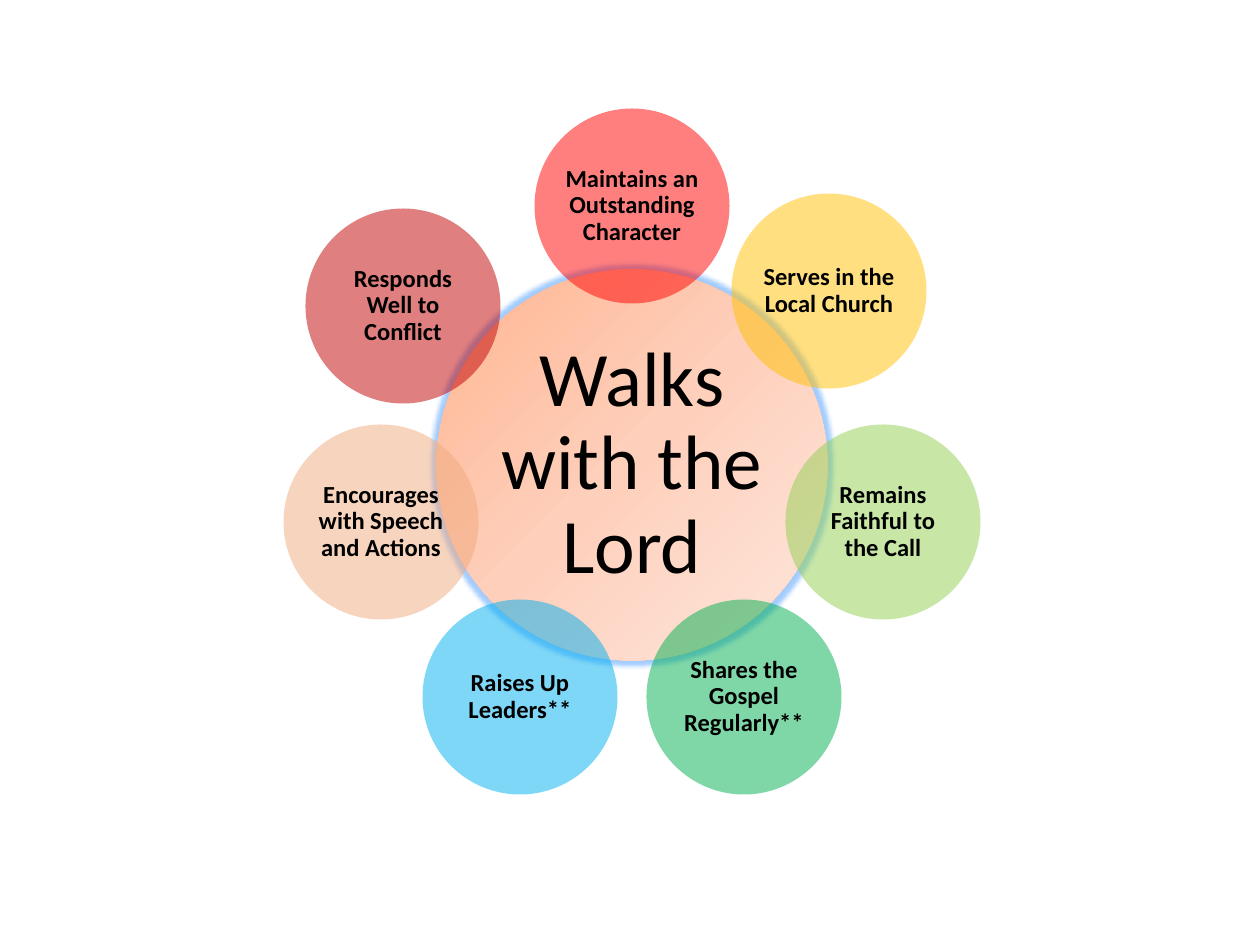
import math
from dataclasses import dataclass

from lxml import etree
from pptx import Presentation
from pptx import util as u
from pptx.dml.color import RGBColor
from pptx.enum import shapes, text
from pptx.oxml.ns import qn

PX = u.Inches(1) // 126  # EMU in one px


@dataclass(frozen=True)
class Theme:
    font: str = "Calibri"
    ink: str = "000000"
    hub_size: int = 44
    trait_size: int = 14
    hub_stops: tuple = ((0, "FFB591"), (50, "FED0BC"), (100, "FEE7DE"))
    glow: str = "3390FF"
    glow_alpha: int = 45
    glow_radius: int = 5
    trait_alpha: int = 50


@dataclass(frozen=True)
class Trait:
    label: str
    color: str
    dx: int = 0  # px away from the even place on the ring
    dy: int = 0


THEME = Theme()
CENTER_X, CENTER_Y = 632, 465
HUB_DIAMETER, TRAIT_DIAMETER = 391, 195
RING_RADIUS = 257

# Clockwise from the top
TRAITS = [
    Trait("Maintains an Outstanding Character", "FF0000", dy=-2),
    Trait("Serves in the Local Church", "FFC000", -4, -14),
    Trait("Remains Faithful to the Call", "92D050"),
    Trait("Shares the Gospel Regularly**", "00B050"),
    Trait("Raises Up Leaders**", "00B0F0"),
    Trait("Encourages with Speech and Actions", "F1AA7E"),
    Trait("Responds Well to Conflict", "C00000", -28, 1),
]


def add_color(parent, color: str, alpha: int = 100) -> None:
    """Append an a:srgbClr, with alpha in percent."""
    clr = etree.SubElement(parent, qn("a:srgbClr"), val=color)
    if alpha < 100:
        etree.SubElement(clr, qn("a:alpha"), val=str(alpha * 1000))


def add_circle(slide, x: int, y: int, diameter: int, label: str,
               size: int, inset: int, bold: bool = False):
    """Draw a captioned circle centred on x, y."""
    left, top = x - diameter / 2, y - diameter / 2
    circle = slide.shapes.add_shape(
        shapes.MSO_SHAPE.OVAL, round(left * PX), round(top * PX),
        diameter * PX, diameter * PX)
    circle.shadow.inherit = False
    circle.line.fill.background()

    frame = circle.text_frame
    frame.word_wrap = True
    frame.vertical_anchor = text.MSO_ANCHOR.MIDDLE
    frame.margin_left = frame.margin_right = inset * PX
    frame.margin_top = frame.margin_bottom = inset * PX
    caption = frame.paragraphs[0]
    caption.alignment = text.PP_ALIGN.CENTER
    caption.line_spacing = 0.9
    run = caption.add_run()
    run.text = label
    run.font.name = THEME.font
    run.font.size = u.Pt(size)
    run.font.bold = bold
    run.font.color.rgb = RGBColor.from_string(THEME.ink)
    return circle


def add_hub(slide, label: str) -> None:
    hub = add_circle(slide, CENTER_X, CENTER_Y, HUB_DIAMETER, label,
                     THEME.hub_size, inset=7)
    # Three-stop gradient towards the lower right
    hub.fill.gradient()
    hub.fill.gradient_angle = 315
    properties = hub.element.spPr
    stops = properties.find(".//" + qn("a:gsLst"))
    stops.clear()
    for position, color in THEME.hub_stops:
        add_color(etree.SubElement(stops, qn("a:gs"), pos=str(position * 1000)), color)
    # Soft rim
    glow = etree.SubElement(properties.find(qn("a:effectLst")), qn("a:glow"),
                            rad=str(int(u.Pt(THEME.glow_radius))))
    add_color(glow, THEME.glow, THEME.glow_alpha)


def add_trait(slide, trait: Trait, angle: float) -> None:
    x = round(CENTER_X + RING_RADIUS * math.sin(angle)) + trait.dx
    y = round(CENTER_Y - RING_RADIUS * math.cos(angle)) + trait.dy
    circle = add_circle(slide, x, y, TRAIT_DIAMETER, trait.label,
                        THEME.trait_size, inset=2, bold=True)
    circle.fill.solid()
    circle.fill.fore_color.rgb = RGBColor.from_string(trait.color)
    color = circle.element.spPr.find(qn("a:solidFill")).find(qn("a:srgbClr"))
    etree.SubElement(color, qn("a:alpha"), val=str(THEME.trait_alpha * 1000))


def main() -> None:
    deck = Presentation()
    deck.slide_width, deck.slide_height = u.Inches(10), u.Inches(7.5)
    slide = deck.slides.add_slide(deck.slide_layouts[6])

    # Hub first, so that the ring overlaps it
    add_hub(slide, "Walks with the Lord")
    for index, trait in enumerate(TRAITS):
        add_trait(slide, trait, index * math.tau / len(TRAITS))

    deck.save("out.pptx")


if __name__ == "__main__":
    main()
